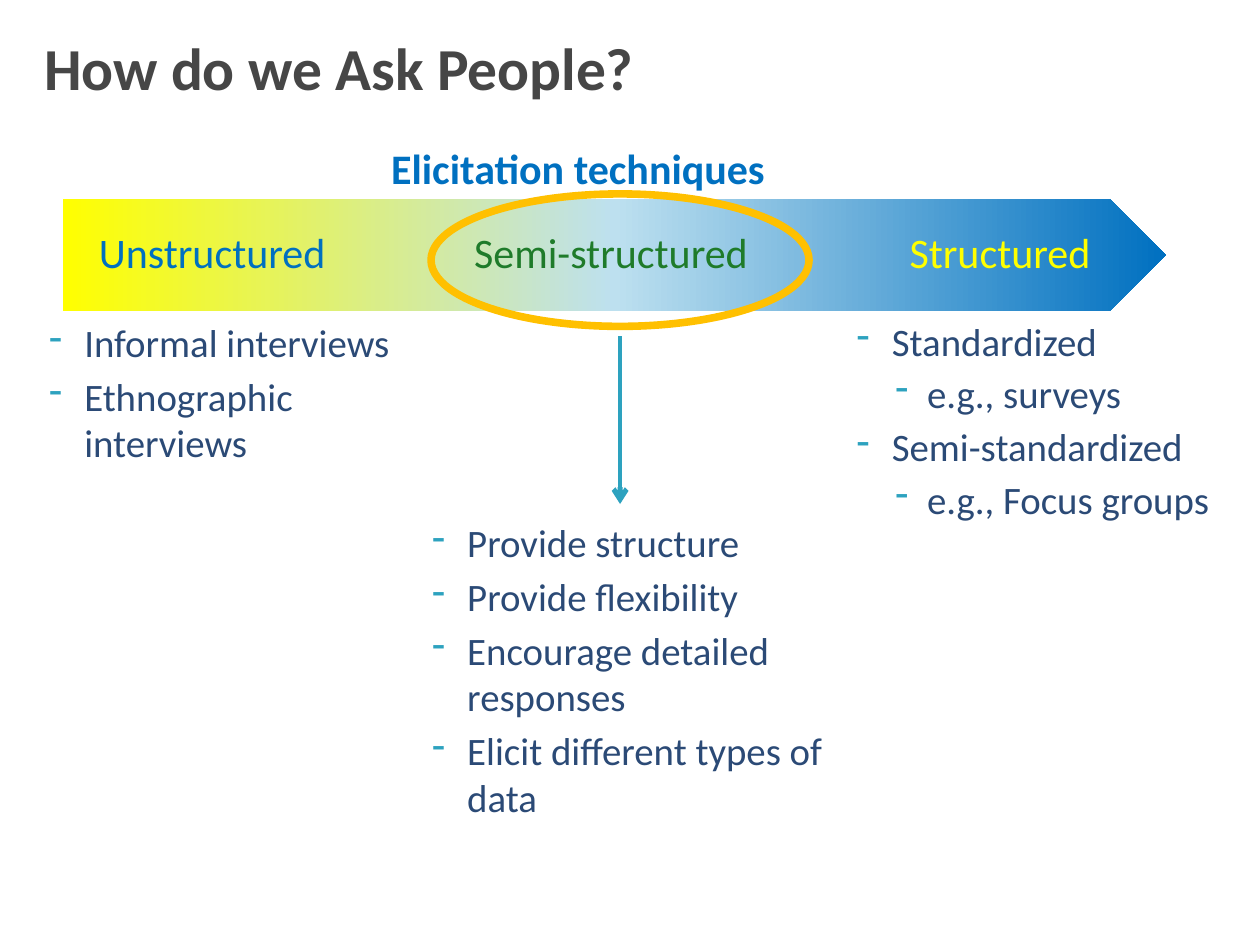
"""Build the slide on elicitation techniques for asking people."""
import lxml.etree
import pptx
import pptx.dml.color
import pptx.enum.shapes
import pptx.enum.text
import pptx.oxml
import pptx.oxml.ns
import pptx.util

Cm = pptx.util.Cm
Pt = pptx.util.Pt
qn = pptx.oxml.ns.qn
SHAPES = pptx.enum.shapes.MSO_SHAPE
CENTER = pptx.enum.text.PP_ALIGN.CENTER

COLORS = {
    "title": "464646",
    "blue": "0070C0",
    "pale": "BDE0EF",
    "yellow": "FFFF00",
    "green": "1F7B2A",
    "amber": "FFC000",
    "teal": "2DA2BF",
    "body": "2B4A76",
}
LIST_INDENTS = [(1.02, -0.71), (1.73, -0.64)]
LIST_SPACES = [4, 3.2]


def rgb(name):
    """Return the named colour."""
    return pptx.dml.color.RGBColor.from_string(COLORS[name])


def set_indent(paragraph, left, first=0):
    """Set the left margin and first-line indent in centimetres."""
    properties = paragraph._p.get_or_add_pPr()
    properties.set("marL", str(Cm(left)))
    properties.set("indent", str(Cm(first)))
    return properties


def add_dash(paragraph, level):
    """Give a paragraph a hanging teal dash for its list level."""
    properties = set_indent(paragraph, *LIST_INDENTS[level])
    color = lxml.etree.SubElement(properties, qn("a:buClr"))
    lxml.etree.SubElement(color, qn("a:srgbClr"), val=COLORS["teal"])
    lxml.etree.SubElement(properties, qn("a:buChar"), char="-")


def write_text(paragraph, text, *, size, color, bold=False, align=None):
    """Write one formatted run into a paragraph."""
    paragraph.alignment = align
    run = paragraph.add_run()
    run.text = text
    run.font.name = "Calibri"
    run.font.size = Pt(size)
    run.font.bold = bold
    run.font.color.rgb = rgb(color)


def add_text_frame(slide, left, top, width, height):
    """Add a wrapping text box and return its text frame."""
    box = slide.shapes.add_textbox(Cm(left), Cm(top), Cm(width), Cm(height))
    box.text_frame.word_wrap = True
    return box.text_frame


def add_label(slide, text, place, indent=0, **style):
    """Add a text box holding one line."""
    paragraph = add_text_frame(slide, *place).paragraphs[0]
    set_indent(paragraph, indent)
    write_text(paragraph, text, **style)


def add_list(slide, items, place):
    """Add a dashed list from (text, level) pairs."""
    frame = add_text_frame(slide, *place)
    for index, (text, level) in enumerate(items):
        paragraph = frame.add_paragraph() if index else frame.paragraphs[0]
        paragraph.level = level
        add_dash(paragraph, level)
        if index:
            paragraph.space_before = Pt(LIST_SPACES[level])
        write_text(paragraph, text, size=22.2, color="body")


def add_shape(slide, kind, left, top, width, height):
    """Add a preset shape without shadow."""
    shape = slide.shapes.add_shape(kind, Cm(left), Cm(top), Cm(width), Cm(height))
    shape.shadow.inherit = False
    return shape


def add_spectrum(slide):
    """Add the banner that fades from yellow to blue."""
    shape = add_shape(slide, SHAPES.PENTAGON, 1.27, 4.01, 22.23, 2.26)
    shape.line.fill.background()
    shape.fill.gradient()
    shape.fill.gradient_angle = 0
    stops = shape._element.spPr.find(qn("a:gradFill")).find(qn("a:gsLst"))
    for stop in list(stops):
        stops.remove(stop)
    for position, name in ((0, "yellow"), (50, "pale"), (100, "blue")):
        stop = lxml.etree.SubElement(stops, qn("a:gs"), pos=str(position * 1000))
        lxml.etree.SubElement(stop, qn("a:srgbClr"), val=COLORS[name])


def add_highlight(slide):
    """Add the ring around the middle technique."""
    ring = add_shape(slide, SHAPES.OVAL, 8.69, 3.91, 7.62, 2.67)
    ring.fill.background()
    ring.line.color.rgb = rgb("amber")
    ring.line.width = Pt(4.33)


def add_down_arrow(slide, x, top, bottom):
    """Add a vertical arrow pointing down."""
    arrow = slide.shapes.add_connector(
        pptx.enum.shapes.MSO_CONNECTOR.STRAIGHT, Cm(x), Cm(top), Cm(x), Cm(bottom))
    arrow.line.color.rgb = rgb("teal")
    arrow.line.width = Pt(2.75)
    lxml.etree.SubElement(arrow.line._get_or_add_ln(), qn("a:tailEnd"), type="arrow")
    lxml.etree.SubElement(arrow._element.spPr, qn("a:effectLst"))


def main():
    """Build and save the presentation."""
    presentation = pptx.Presentation()
    presentation.slide_width = Cm(25.4)
    presentation.slide_height = Cm(19.05)
    slide = presentation.slides.add_slide(presentation.slide_layouts[6])

    add_spectrum(slide)
    add_label(slide, "How do we Ask People?", (0.64, 0.51, 24.33, 1.7),
              size=34, color="title", bold=True)
    add_label(slide, "Elicitation techniques ", (1.27, 2.74, 20.96, 1.27),
              size=24, color="blue", bold=True, align=CENTER)
    for text, left, width, color in (
        ("Unstructured", 1.27, 5.72, "blue"),
        ("Semi-structured", 8.26, 7.82, "green"),
        ("Structured", 17.15, 5.72, "yellow"),
    ):
        add_label(slide, text, (left, 4.45, width, 1.6), indent=0.3,
                  size=24, color=color, align=CENTER)
    add_highlight(slide)
    add_down_arrow(slide, 12.5, 6.78, 10.16)

    add_list(slide, [("Informal interviews", 0), ("Ethnographic interviews", 0)],
             (0.43, 6.3, 8.05, 3.02))
    add_list(slide, [("Provide structure", 0), ("Provide flexibility", 0),
                     ("Encourage detailed responses", 0),
                     ("Elicit different types of data", 0)],
             (8.15, 10.34, 8.79, 5.94))
    add_list(slide, [("Standardized", 0), ("e.g., surveys", 1),
                     ("Semi-standardized", 0), ("e.g., Focus groups", 1)],
             (16.71, 6.27, 8.26, 5.59))
    presentation.save("out.pptx")


if __name__ == "__main__":
    main()
